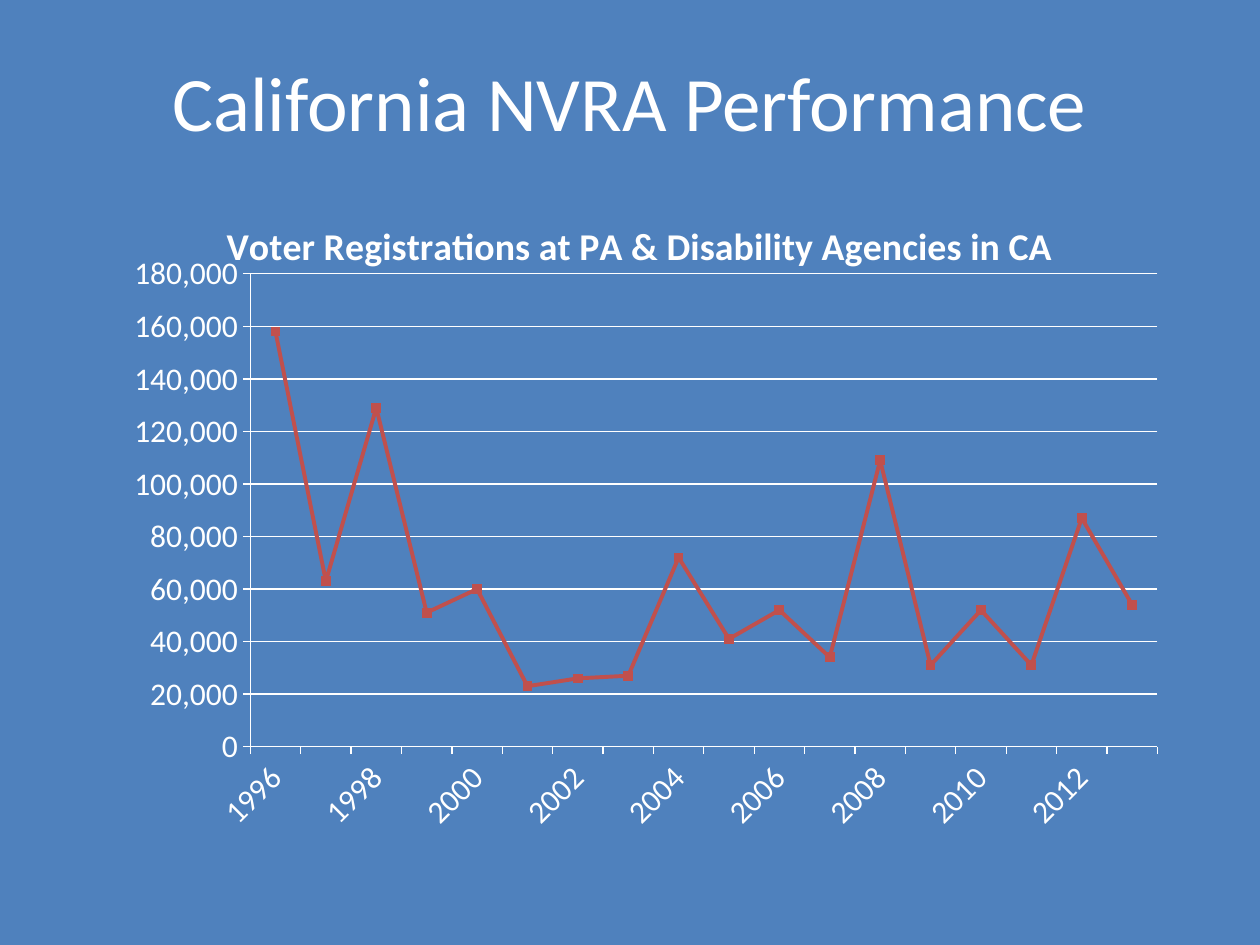
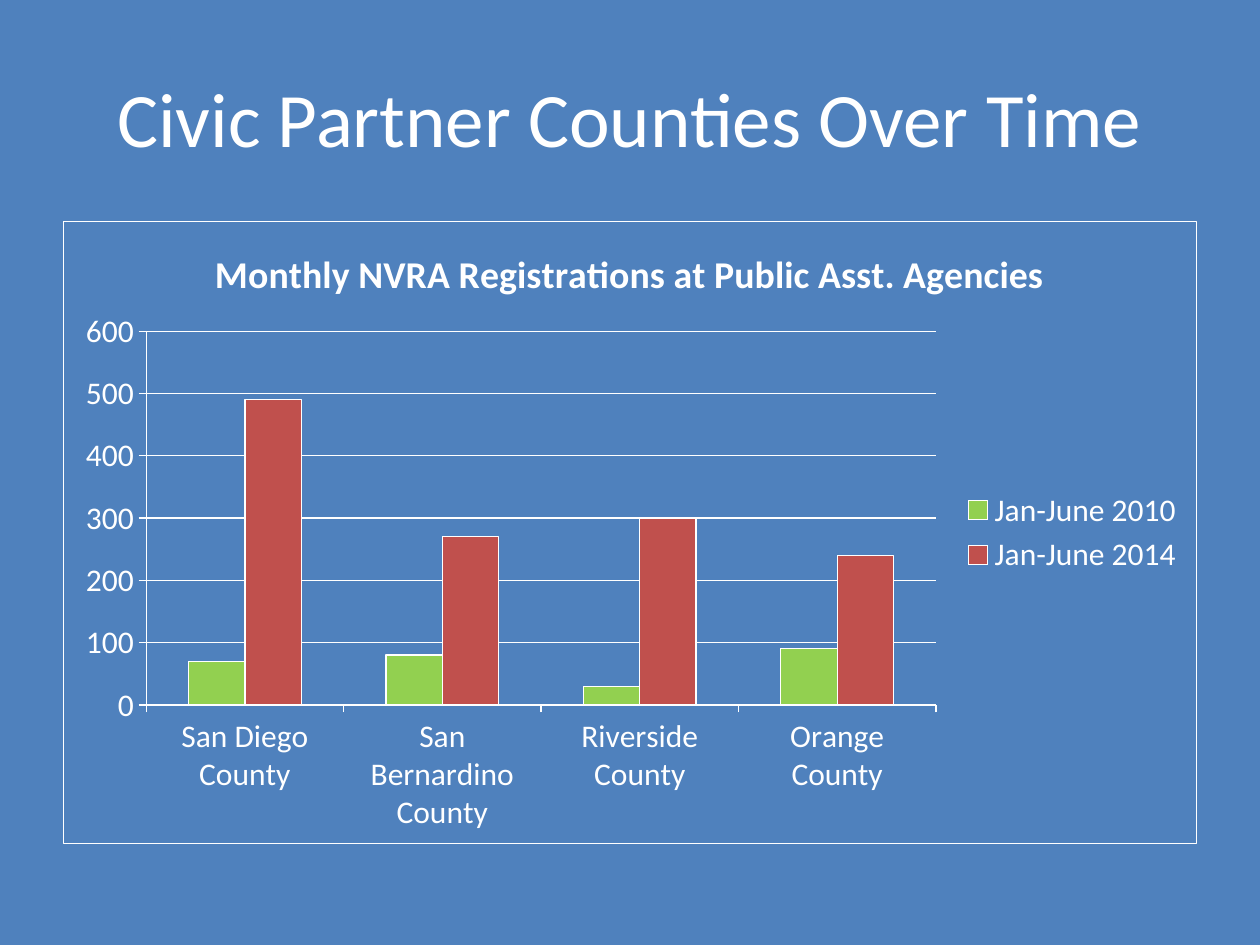
from lxml.etree import SubElement
from pptx import Presentation
from pptx.chart.data import CategoryChartData
from pptx.dml.color import RGBColor
from pptx.enum.chart import XL_CHART_TYPE as CT
from pptx.enum.chart import XL_LEGEND_POSITION as LP
from pptx.enum.chart import XL_MARKER_STYLE as MS
from pptx.enum.chart import XL_TICK_MARK as TM
from pptx.enum.text import MSO_ANCHOR, PP_ALIGN
from pptx.oxml.ns import qn
from pptx.util import Cm, Pt

FONT = "Calibri"
BLUE, WHITE, RED, GREEN = "4F81BD", "FFFFFF", "C0504D", "92D050"

REGISTRATIONS = [158000, 63000, 129000, 51000, 60000, 23000, 26000, 27000, 72000,
                 41000, 52000, 34000, 109000, 31000, 52000, 31000, 87000, 54000]
YEARS = [str(1996 + i) for i in range(len(REGISTRATIONS))]
COUNTIES = [f"{name} County" for name in
            ("San Diego", "San Bernardino", "Riverside", "Orange")]
COUNTY_SERIES = {"Jan-June 2010": [70, 80, 30, 90],
                 "Jan-June 2014": [490, 270, 300, 240]}


def rgb(color):
    return RGBColor.from_string(color)


def paint(fill, color):
    fill.solid()
    fill.fore_color.rgb = rgb(color)


def draw_line(line, color, width=0.75):
    paint(line.fill, color)
    line.width = Pt(width)


def write(tf, text, size, color=WHITE, bold=False, align=PP_ALIGN.CENTER):
    p = tf.paragraphs[0]
    p.alignment = align
    r = p.add_run()
    r.text = text
    r.font.name, r.font.size, r.font.bold = FONT, Pt(size), bold
    r.font.color.rgb = rgb(color)


def add_titled_slide(prs, title, top):
    s = prs.slides.add_slide(prs.slide_layouts[5])
    sp = s.shapes.title
    sp.left, sp.top, sp.width, sp.height = Cm(1.27), Cm(top), Cm(22.86), Cm(3.18)
    sp.text_frame.vertical_anchor = MSO_ANCHOR.MIDDLE
    write(sp.text_frame, title, 44)
    return s


def style_axis(axis):
    axis.major_tick_mark, axis.minor_tick_mark = TM.OUTSIDE, TM.NONE
    draw_line(axis.format.line, WHITE)


def add_chart(s, kind, title, cats, series, box, number_format="General"):
    data = CategoryChartData(number_format=number_format)
    data.categories = cats
    for name, values in series.items():
        data.add_series(name, values)
    chart = s.shapes.add_chart(kind, *map(Cm, box), data).chart
    chart.font.name, chart.font.size = FONT, Pt(18)
    chart.font.color.rgb = rgb(WHITE)
    chart.has_legend = False
    write(chart.chart_title.text_frame, title, 21.6, bold=True)
    chart.chart_title.include_in_layout = False
    chart.plots[0].vary_by_categories = False
    style_axis(chart.category_axis)
    style_axis(chart.value_axis)
    chart.value_axis.has_major_gridlines = True
    draw_line(chart.value_axis.major_gridlines.format.line, WHITE)
    chart.value_axis.tick_labels.number_format = number_format
    chart.value_axis.tick_labels.number_format_is_linked = False
    return chart


def place_plot(chart, **percents):
    area = chart.plots[0]._element.getparent()
    layout = area.find(qn("c:layout"))
    if layout is None:
        layout = SubElement(area, qn("c:layout"))
        area.insert(0, layout)
    manual = SubElement(layout, qn("c:manualLayout"))
    settings = dict(layoutTarget="inner", xMode="edge", yMode="edge")
    settings.update((side, percents[side] / 100) for side in "xywh")
    for tag, value in settings.items():
        SubElement(manual, qn(f"c:{tag}")).set("val", str(value))


def tilt_labels(axis, degrees):
    axis.tick_labels.font.size = Pt(18)
    axis.tick_labels.font.color.rgb = rgb(WHITE)
    body = axis._element.find(qn("c:txPr")).find(qn("a:bodyPr"))
    body.set("rot", str(degrees * 60000))


def frame_chart(chart, color, width):
    space = chart._chartSpace
    props = space.makeelement(qn("c:spPr"))
    space.find(qn("c:chart")).addnext(props)
    SubElement(props, qn("a:noFill"))
    ln = SubElement(props, qn("a:ln"), w=str(Pt(width)))
    SubElement(SubElement(ln, qn("a:solidFill")), qn("a:srgbClr"), val=color)


def add_performance_slide(prs):
    s = add_titled_slide(prs, "California NVRA Performance", 0.43)
    chart = add_chart(s, CT.LINE_MARKERS,
                      "Voter Registrations at PA & Disability Agencies in CA",
                      YEARS, {"Series 1": REGISTRATIONS},
                      (2.11, 3.89, 21.59, 13.26), "#,##0")
    place_plot(chart, x=13.6, y=12.3, w=84.7, h=71.9)
    tilt_labels(chart.category_axis, -45)
    chart.value_axis.maximum_scale = 180000
    chart.value_axis.major_unit = 20000
    ser = chart.plots[0].series[0]
    ser.smooth = False
    draw_line(ser.format.line, RED, 2.25)
    ser.marker.style, ser.marker.size = MS.SQUARE, 5
    paint(ser.marker.format.fill, RED)
    draw_line(ser.marker.format.line, RED)


def add_counties_slide(prs):
    s = add_titled_slide(prs, "Civic Partner Counties Over Time", 0.76)
    chart = add_chart(s, CT.COLUMN_CLUSTERED,
                      "Monthly NVRA Registrations at Public Asst. Agencies",
                      COUNTIES, COUNTY_SERIES, (1.27, 4.45, 22.86, 12.57))
    frame_chart(chart, WHITE, 0.5)
    place_plot(chart, x=7.3, y=17.7, w=69.7, h=60)
    chart.value_axis.maximum_scale = 600
    chart.value_axis.major_unit = 100
    chart.has_legend = True
    chart.legend.position = LP.RIGHT
    chart.legend.include_in_layout = False
    plot = chart.plots[0]
    plot.gap_width, plot.overlap = 150, 0
    for ser, color in zip(plot.series, (GREEN, RED)):
        paint(ser.format.fill, color)
        draw_line(ser.format.line, WHITE)


def main():
    prs = Presentation()
    prs.slide_width, prs.slide_height = Cm(25.4), Cm(19.05)
    paint(prs.slide_master.background.fill, BLUE)
    add_performance_slide(prs)
    add_counties_slide(prs)
    prs.save("out.pptx")


if __name__ == "__main__":
    main()
